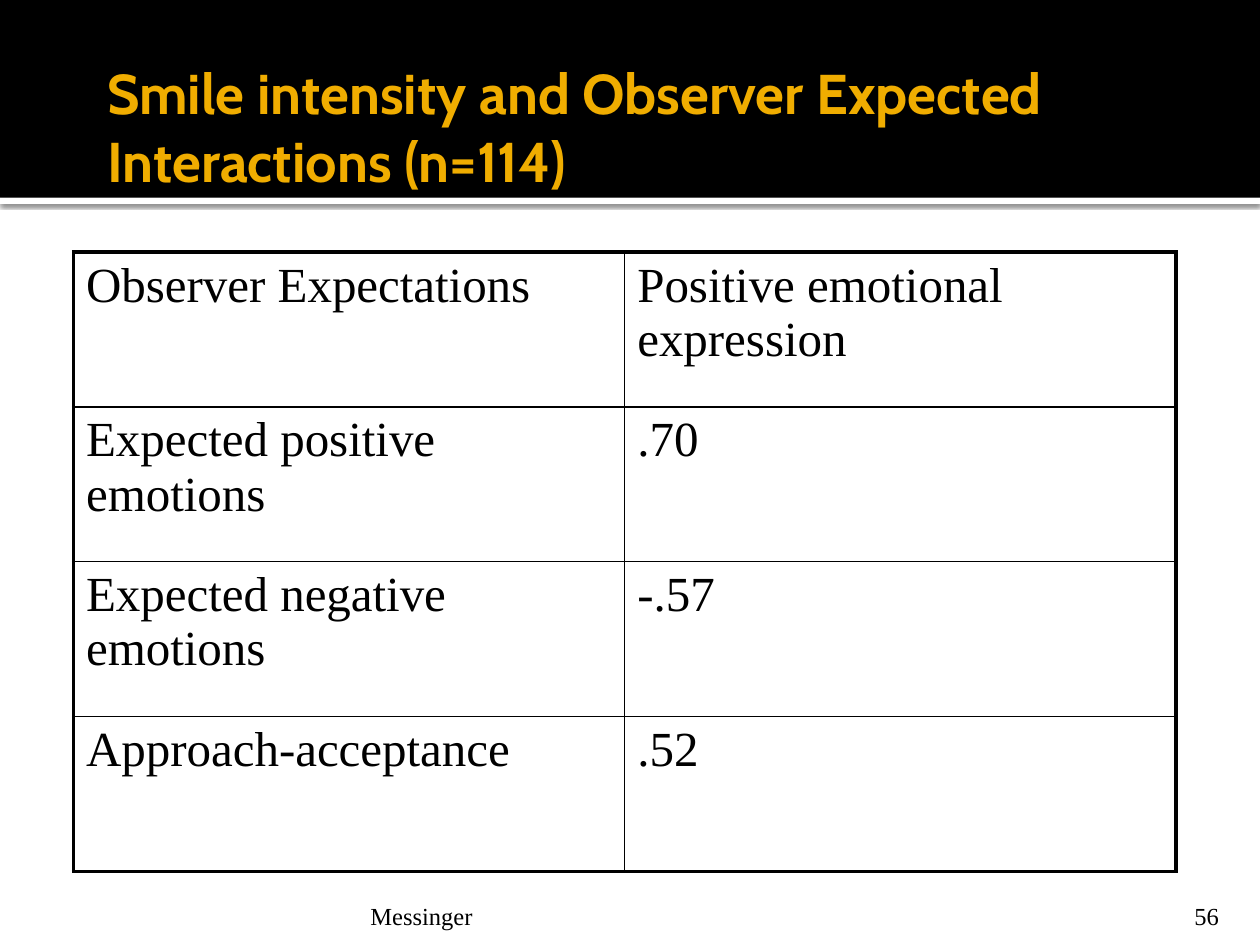
from lxml import etree
from pptx import Presentation, util as u
from pptx.dml.color import RGBColor
from pptx.enum import shapes, text
from pptx.oxml import ns

Pt = u.Pt
HUES = {"ink": "000000", "paper": "FFFFFF", "gold": "F0AD00"}
SERIF = "Times New Roman"
ROWS = [
    ("Observer Expectations", "Positive emotional expression"),
    ("Expected positive emotions", ".70"),
    ("Expected negative emotions", "-.57"),
    ("Approach-acceptance", ".52"),
]


def write(frame, words, size, font=SERIF, hue="ink", bold=False,
          align=text.PP_ALIGN.LEFT):
    frame.word_wrap = True
    para = frame.paragraphs[0]
    para.alignment = align
    run = para.add_run()
    run.text = words
    run.font.size = Pt(size)
    run.font.name = font
    run.font.bold = bold
    run.font.color.rgb = RGBColor.from_string(HUES[hue])


def add(parent, tag, **attrs):
    return etree.SubElement(parent, ns.qn(tag), attrs)


prs = Presentation()
prs.slide_width, prs.slide_height = Pt(720), Pt(540)
slide = prs.slides.add_slide(prs.slide_layouts[5])
title = slide.shapes.title

for top, height, hue in [(113, 3.6, "paper"), (0, 113, "ink")]:
    bar = slide.shapes.add_shape(shapes.MSO_SHAPE.RECTANGLE,
                                 0, Pt(top), Pt(720), Pt(height))
    bar.shadow.inherit = False
    bar.fill.solid()
    bar.fill.fore_color.rgb = RGBColor.from_string(HUES[hue])
    bar.line.fill.background()
    title.element.addprevious(bar.element)
    if hue == "paper":
        glow = bar.element.spPr.find(ns.qn("a:effectLst"))
        shade = add(glow, "a:outerShdw", blurRad=str(Pt(2.5)),
                    dist=str(Pt(0.8)), dir="5400000", rotWithShape="0")
        tint = add(shade, "a:srgbClr", val=HUES["ink"])
        add(tint, "a:alpha", val="60000")

title.left, title.top, title.width, title.height = Pt(54), Pt(27), Pt(612), Pt(90)
frame = title.text_frame
frame.auto_size = text.MSO_AUTO_SIZE.NONE
frame.vertical_anchor = text.MSO_ANCHOR.MIDDLE
frame.margin_left = Pt(7.2)
frame.margin_right = frame.margin_top = frame.margin_bottom = Pt(3.6)
write(frame, "Smile intensity and Observer Expected Interactions (n=114)", 32,
      font="Cabin", hue="gold", bold=True)

for words, left, width, inset, align in [
    ("Messinger", 208, 433.5, 3.6, text.PP_ALIGN.LEFT),
    ("56", 646, 57.6, 7.2, text.PP_ALIGN.RIGHT),
]:
    box = slide.shapes.add_textbox(Pt(left), Pt(510), Pt(width), Pt(21.6))
    frame = box.text_frame
    frame.vertical_anchor = text.MSO_ANCHOR.BOTTOM
    frame.margin_left = frame.margin_right = Pt(inset)
    frame.margin_top, frame.margin_bottom = Pt(3.6), 0
    write(frame, words, 14, align=align)

table = slide.shapes.add_table(len(ROWS), 2, Pt(42), Pt(144),
                               Pt(630), Pt(354)).table
table.first_row = table.horz_banding = False
for r, row in enumerate(ROWS):
    for c, words in enumerate(row):
        cell = table.cell(r, c)
        write(cell.text_frame, words, 28)
        props = cell._tc.get_or_add_tcPr()
        edges = {"L": c == 0, "R": c == 1, "T": r == 0, "B": r == len(ROWS) - 1}
        for side, outer in edges.items():
            line = add(props, f"a:ln{side}", w=str(Pt(2.25 if outer else 1)))
            add(add(line, "a:solidFill"), "a:srgbClr", val=HUES["ink"])
        cell.fill.background()

prs.save("out.pptx")
